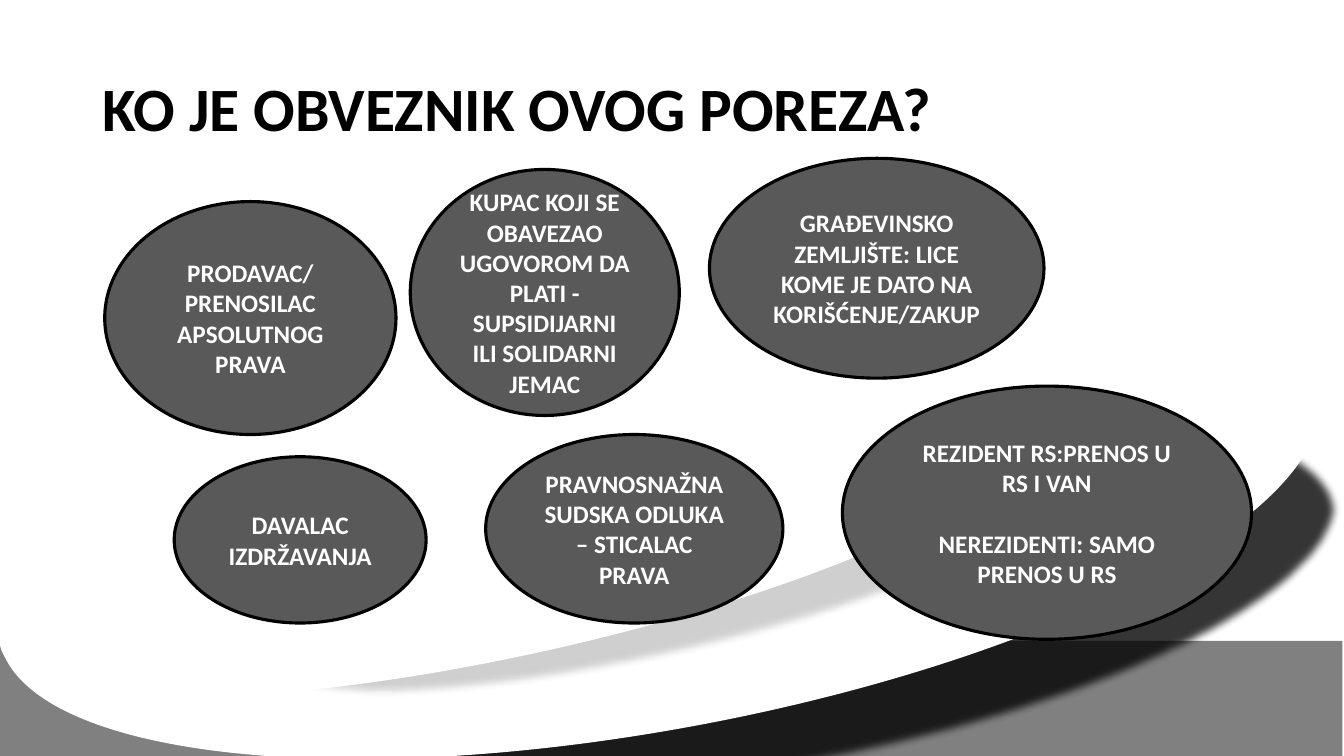
import pptx
import pptx.util
import pptx.dml.color
import pptx.enum.shapes
import pptx.enum.text
import pptx.oxml
import pptx.oxml.ns

Cm = pptx.util.Cm
Pt = pptx.util.Pt
MSO_SHAPE = pptx.enum.shapes.MSO_SHAPE
ANCHOR = pptx.enum.text.MSO_ANCHOR
ALIGN = pptx.enum.text.PP_ALIGN
COLORS = {"white": "FFFFFF", "black": "000000", "ground": "808080", "bubble": "595959"}
FONT = "Calibri"

deck = pptx.Presentation()
deck.slide_width, deck.slide_height = Cm(33.87), Cm(19.05)
page = deck.slides.add_slide(deck.slide_layouts[6])


def add_filled(kind, left, top, width, height, color):
    shape = page.shapes.add_shape(kind, Cm(left), Cm(top), Cm(width), Cm(height))
    shape.shadow.inherit = False
    shape.fill.solid()
    shape.fill.fore_color.rgb = pptx.dml.color.RGBColor.from_string(COLORS[color])
    shape.line.fill.background()
    return shape


def style_font(font, size, color):
    font.name, font.size, font.bold = FONT, Pt(size), True
    font.color.rgb = pptx.dml.color.RGBColor.from_string(COLORS[color])


# Ground strip
add_filled(MSO_SHAPE.RECTANGLE, -0.03, 16.15, 33.86, 3.07, "ground")

# Tilted curves: centre x, centre y, width, height, rotation, colour, opacity %
curves = [
    (19.73, 15.25, 28.6, 8.4, -10.6, "black", 79),
    (16.61, 13.02, 33.83, 10.69, -10.6, "white", 100),
    (16.76, 14.62, 20.2, 4, -12.7, "black", 19),
    (13.25, 13.3, 27.15, 6.27, -12.7, "white", 100),
]
for center_x, center_y, width, height, rotation, color, opacity in curves:
    curve = add_filled(MSO_SHAPE.OVAL, center_x - width / 2, center_y - height / 2,
                       width, height, color)
    curve.rotation = rotation
    if opacity < 100:
        # Translucent shade with a soft edge
        fill_color = curve.fill._xPr.find(".//" + pptx.oxml.ns.qn("a:srgbClr"))
        namespace = pptx.oxml.ns.nsdecls("a")
        fill_color.append(pptx.oxml.parse_xml(
            f'<a:alpha {namespace} val="{opacity * 1000}"/>'))
        effects = curve._element.spPr.find(pptx.oxml.ns.qn("a:effectLst"))
        effects.append(pptx.oxml.parse_xml(
            f'<a:softEdge {namespace} rad="{Pt(6)}"/>'))

# Title
title = page.shapes.add_textbox(Cm(2.34), Cm(1.55), Cm(29.21), Cm(2.51))
title.text_frame.word_wrap = True
title.text_frame.vertical_anchor = ANCHOR.MIDDLE
title.text_frame.text = "KO JE OBVEZNIK OVOG POREZA?"
title_para = title.text_frame.paragraphs[0]
title_para.line_spacing = 0.9
style_font(title_para.runs[0].font, 44, "black")

# Taxpayer bubbles: left, top, width, height, paragraphs, gap between paragraphs
bubbles = [
    (2.64, 5.08, 7.34, 5.87, ["PRODAVAC/", "PRENOSILAC APSOLUTNOG PRAVA"], 0),
    (10.34, 4.27, 6.78, 6.2,
     ["KUPAC KOJI SE OBAVEZAO UGOVOROM DA PLATI - SUPSIDIJARNI ILI SOLIDARNI JEMAC"], 0),
    (17.88, 3.99, 8.43, 5.54,
     ["GRAĐEVINSKO ZEMLJIŠTE: LICE KOME JE DATO NA KORIŠĆENJE/ZAKUP"], 0),
    (4.39, 11.51, 6.35, 4.19, ["DAVALAC IZDRŽAVANJA"], 0),
    (12.24, 10.95, 7.49, 4.75, ["PRAVNOSNAŽNA SUDSKA ODLUKA – STICALAC PRAVA"], 0),
    (21.23, 9.73, 10.31, 6.38,
     ["REZIDENT RS:PRENOS U RS I VAN", "NEREZIDENTI: SAMO PRENOS U RS"], 21.6),
]
for left, top, width, height, lines, gap in bubbles:
    bubble = add_filled(MSO_SHAPE.OVAL, left, top, width, height, "bubble")
    bubble.line.color.rgb = pptx.dml.color.RGBColor.from_string(COLORS["black"])
    bubble.line.width = Pt(2.25)
    bubble.text_frame.word_wrap = True
    bubble.text_frame.vertical_anchor = ANCHOR.MIDDLE
    bubble.text_frame.text = "\n".join(lines)
    for number, para in enumerate(bubble.text_frame.paragraphs):
        para.alignment = ALIGN.CENTER
        if number and gap:
            para.space_before = Pt(gap)
        style_font(para.runs[0].font, 18, "white")

deck.save("out.pptx")
